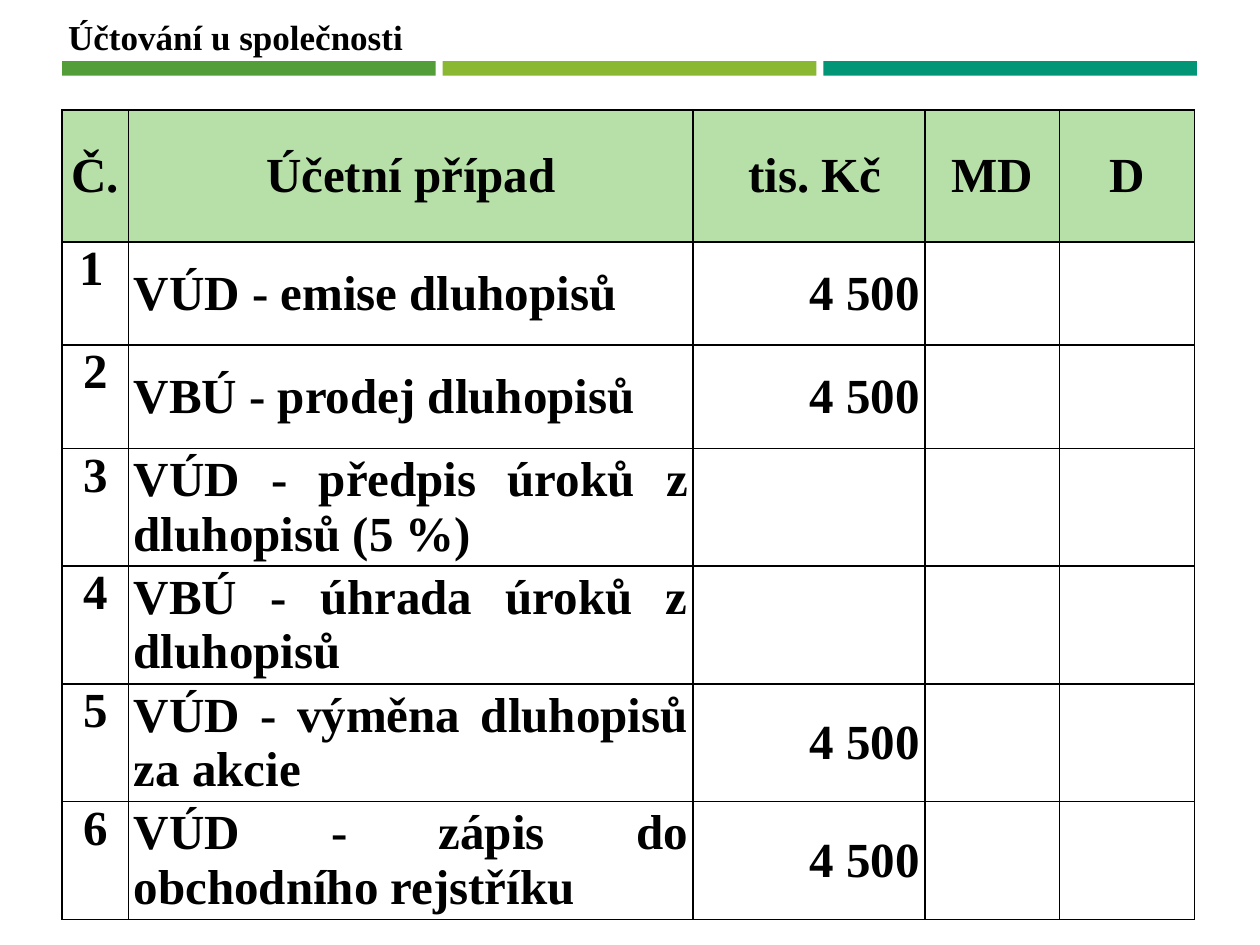
"""Build the slide on bond accounting entries in a company."""
import pptx
import pptx.chart.data
import pptx.dml.color
import pptx.enum.shapes
import pptx.enum.text
import pptx.util
from lxml import etree

Pt = pptx.util.Pt
ALIGN = pptx.enum.text.PP_ALIGN
ANCHOR = pptx.enum.text.MSO_ANCHOR
FONT = "Times New Roman"
COLORS = {"black": "000000", "header": "B7E0A8", "green": "549E39",
          "lime": "8AB833", "teal": "029676"}

TITLE = "Účtování u společnosti"
BARS = ["green", "lime", "teal"]
HEADER = ["Č.", "Účetní případ", "\u00a0tis. Kč", "MD", "D"]
ENTRIES = [
    ("\u00a01", "VÚD - emise dluhopisů", "4 500", "", ""),
    ("2", "VBÚ - prodej dluhopisů", "4 500", "", ""),
    ("3", "VÚD - předpis úroků z dluhopisů (5 %)", "", "", ""),
    ("4", "VBÚ - úhrada úroků z dluhopisů", "", "", ""),
    ("5", "VÚD - výměna dluhopisů za akcie", "4 500", "", ""),
    ("6", "VÚD - zápis do obchodního rejstříku", "4 500", "", ""),
]
COL_WIDTHS = [38, 322.5, 132.5, 77, 77]
ROW_HEIGHTS = [75.5, 59, 59, 67.2, 67.2, 67.2, 67.2]
COL_ALIGN = [ALIGN.CENTER, ALIGN.JUSTIFY, ALIGN.RIGHT, ALIGN.CENTER, ALIGN.CENTER]
LEFT, BAR_TOP, BAR_WIDTH, BAR_HEIGHT, BAR_STEP = 35.5, 34.9, 213.5, 8.3, 217.5
TABLE_TOP = 62.8


def rgb(name):
    return pptx.dml.color.RGBColor.from_string(COLORS[name])


def add_run(p, text, size):
    r = p.add_run()
    r.text = text
    r.font.name, r.font.size, r.font.bold = FONT, Pt(size), True
    r.font.color.rgb = rgb("black")


def add_borders(cell):
    ns = "http://schemas.openxmlformats.org/drawingml/2006/main"
    tc_pr = cell._tc.get_or_add_tcPr()
    for i, side in enumerate(("lnL", "lnR", "lnT", "lnB")):
        ln = etree.Element(f"{{{ns}}}{side}", w=str(Pt(1)))
        fill = etree.SubElement(ln, f"{{{ns}}}solidFill")
        etree.SubElement(fill, f"{{{ns}}}srgbClr", val=COLORS["black"])
        tc_pr.insert(i, ln)


def fill_cell(cell, text, row, col):
    if row == 0:
        cell.fill.solid()
        cell.fill.fore_color.rgb = rgb("header")
    else:
        cell.fill.background()
    add_borders(cell)
    cell.margin_left = cell.margin_right = Pt(3)
    cell.margin_top = cell.margin_bottom = 0
    cell.vertical_anchor = ANCHOR.TOP if row and col == 0 else ANCHOR.MIDDLE
    if text:
        p = cell.text_frame.paragraphs[0]
        p.alignment = ALIGN.CENTER if row == 0 else COL_ALIGN[col]
        if text.startswith("\u00a0") and row:
            p.alignment = ALIGN.LEFT
        add_run(p, text, 28)


def add_title(s):
    sp = s.shapes.title
    sp.left, sp.top, sp.width, sp.height = Pt(31.7), Pt(5), Pt(207.4), Pt(31.7)
    tf = sp.text_frame
    tf.word_wrap = False
    tf.auto_size = pptx.enum.text.MSO_AUTO_SIZE.SHAPE_TO_FIT_TEXT
    tf.vertical_anchor = ANCHOR.TOP
    p = tf.paragraphs[0]
    p.alignment = ALIGN.LEFT
    add_run(p, TITLE, 20)


def add_bars(s):
    for i, color in enumerate(BARS):
        sp = s.shapes.add_shape(pptx.enum.shapes.MSO_SHAPE.RECTANGLE,
                                Pt(LEFT + i * BAR_STEP), Pt(BAR_TOP),
                                Pt(BAR_WIDTH), Pt(BAR_HEIGHT))
        sp.shadow.inherit = False
        sp.fill.solid()
        sp.fill.fore_color.rgb = rgb(color)
        sp.line.fill.background()


def add_entries(s):
    rows = [HEADER, *ENTRIES]
    table = s.shapes.add_table(len(rows), len(HEADER), Pt(LEFT), Pt(TABLE_TOP),
                               Pt(sum(COL_WIDTHS)), Pt(sum(ROW_HEIGHTS))).table
    table.horz_banding = False
    for column, width in zip(table.columns, COL_WIDTHS):
        column.width = Pt(width)
    for i, (height, texts) in enumerate(zip(ROW_HEIGHTS, rows)):
        table.rows[i].height = Pt(height)
        for j, text in enumerate(texts):
            fill_cell(table.cell(i, j), text, i, j)


def main():
    prs = pptx.Presentation()
    prs.slide_width, prs.slide_height = Pt(720), Pt(540)
    s = prs.slides.add_slide(prs.slide_layouts[5])
    add_bars(s)
    add_title(s)
    add_entries(s)
    prs.save("out.pptx")


if __name__ == "__main__":
    main()
